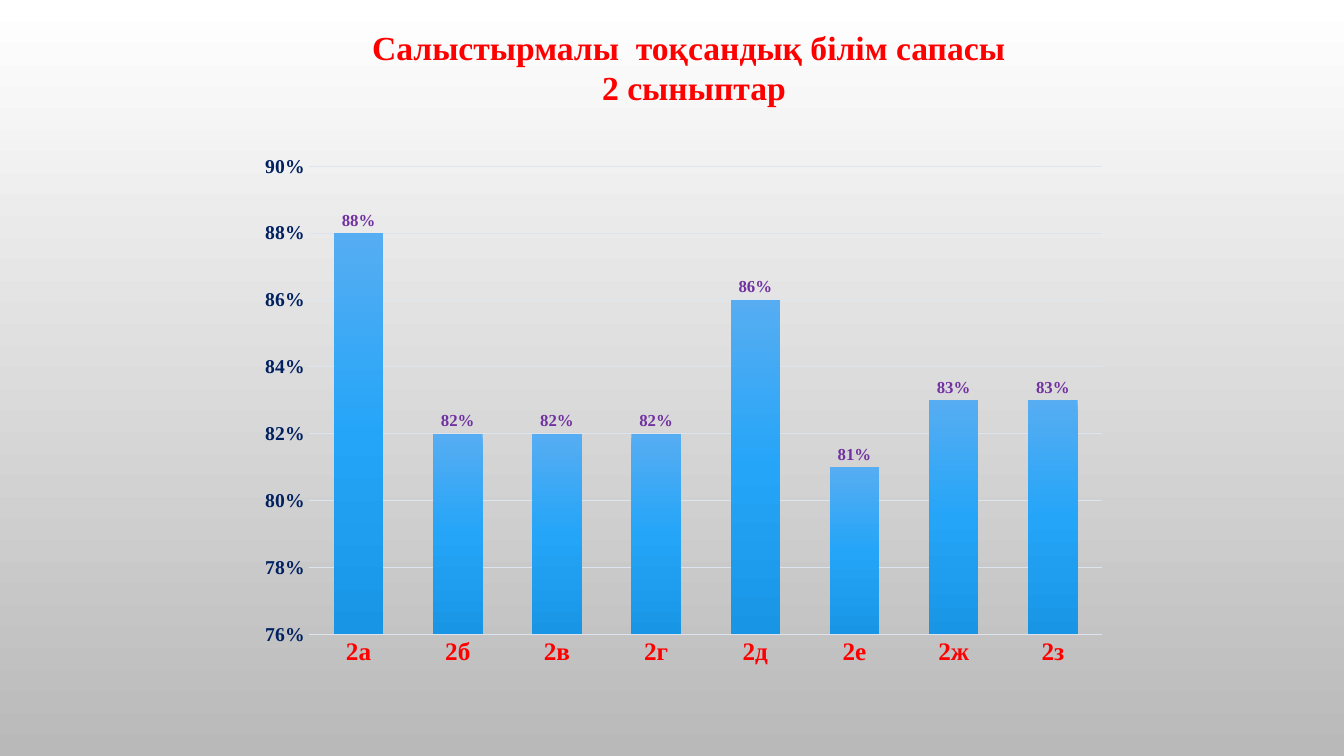
"""Build a slide comparing the quality of knowledge across the second-grade classes."""
from lxml.etree import SubElement
from pptx import Presentation
from pptx.chart.data import CategoryChartData
from pptx.dml.color import RGBColor
from pptx.enum.chart import XL_CHART_TYPE, XL_LABEL_POSITION, XL_TICK_MARK
from pptx.enum.text import MSO_ANCHOR, MSO_AUTO_SIZE, PP_ALIGN
from pptx.oxml import parse_xml
from pptx.oxml.ns import nsdecls, qn
from pptx.util import Emu, Pt

EMU_PER_INCH = 914400
PX_PER_INCH = 100.8

RED = RGBColor(0xFF, 0x00, 0x00)
NAVY = RGBColor(0x00, 0x20, 0x60)
PURPLE = RGBColor(0x70, 0x30, 0xA0)
BLACK = RGBColor(0x00, 0x00, 0x00)
GRID = RGBColor(0xDC, 0xE4, 0xEF)
BACKDROP = [RGBColor(0xFF, 0xFF, 0xFF), RGBColor(0xB9, 0xB9, 0xB9)]
BAR_SHADES = [RGBColor(0x56, 0xAD, 0xF2), RGBColor(0x25, 0xA5, 0xF8),
              RGBColor(0x18, 0x95, 0xE5)]

SERIF = "Times New Roman"
HEADING = [("Салыстырмалы  тоқсандық білім сапасы", PP_ALIGN.LEFT),
           ("2 сыныптар", PP_ALIGN.CENTER)]
QUALITY = {"2а": 0.88, "2б": 0.82, "2в": 0.82, "2г": 0.82,
           "2д": 0.86, "2е": 0.81, "2ж": 0.83, "2з": 0.83}
PLOT_AREA = {"x": 0.07, "y": 0.04, "w": 0.91, "h": 0.88}


def px(length):
    """Turn pixels into EMU."""
    return Emu(round(length * EMU_PER_INCH / PX_PER_INCH))


def style_font(font, size, colour, name=SERIF, bold=True):
    """Set the face, size, weight and colour of a font."""
    font.name, font.size, font.bold = name, Pt(size), bold
    font.color.rgb = colour


def paint_gradient(fill, owner, colours):
    """Fill from top to bottom with evenly spaced colours."""
    fill.gradient()
    fill.gradient_angle = 270
    stops = next(owner.iter(qn("a:gsLst")))
    for stop in list(stops):
        stops.remove(stop)
    for index, colour in enumerate(colours):
        position = 100000 * index // (len(colours) - 1)
        stop = SubElement(stops, qn("a:gs"), pos=str(position))
        SubElement(stop, qn("a:srgbClr"), val=str(colour))


def style_line(line):
    """Draw a thin pale line."""
    line.color.rgb = GRID
    line.width = Pt(0.75)


def style_axis(axis, size, colour):
    """Format axis labels and drop the tick marks."""
    axis.major_tick_mark = axis.minor_tick_mark = XL_TICK_MARK.NONE
    style_font(axis.tick_labels.font, size, colour)


def place_plot(chart):
    """Fix the inner plot area as fractions of the chart."""
    plot_area = chart._chartSpace.chart.plotArea
    for old in plot_area.findall(qn("c:layout")):
        plot_area.remove(old)
    layout = parse_xml(f"<c:layout {nsdecls('c')}/>")
    manual = SubElement(layout, qn("c:manualLayout"))
    SubElement(manual, qn("c:layoutTarget"), val="inner")
    for side in "xy":
        SubElement(manual, qn(f"c:{side}Mode"), val="edge")
    for side, share in PLOT_AREA.items():
        SubElement(manual, qn(f"c:{side}"), val=str(share))
    plot_area.insert(0, layout)


def add_heading(slide):
    """Write the two-line title."""
    title = slide.shapes.title
    title.left, title.top, title.width, title.height = map(px, (362, 22, 664, 92))
    frame = title.text_frame
    frame.word_wrap = True
    frame.auto_size = MSO_AUTO_SIZE.SHAPE_TO_FIT_TEXT
    frame.vertical_anchor = MSO_ANCHOR.TOP
    for index, (text, alignment) in enumerate(HEADING):
        line = frame.add_paragraph() if index else frame.paragraphs[0]
        line.alignment = alignment
        run = line.add_run()
        run.text = text
        style_font(run.font, 24, RED)


def add_quality_chart(slide):
    """Add the column chart of quality by class."""
    data = CategoryChartData(number_format="0%")
    data.categories = list(QUALITY)
    data.add_series("Series 1", list(QUALITY.values()))
    chart = slide.shapes.add_chart(XL_CHART_TYPE.COLUMN_CLUSTERED,
                                   *map(px, (248, 145, 872, 532)), data).chart
    chart.has_legend = chart.has_title = False
    style_font(chart.font, 10, BLACK, "Cabin", False)

    classes, percent = chart.category_axis, chart.value_axis
    style_axis(classes, 18, RED)
    style_line(classes.format.line)
    style_axis(percent, 14, NAVY)
    percent.format.line.fill.background()
    style_line(percent.major_gridlines.format.line)
    percent.minimum_scale, percent.maximum_scale = 0.76, 0.9
    percent.major_unit = 0.02
    percent.tick_labels.number_format = "0%"
    percent.tick_labels.number_format_is_linked = False

    columns = chart.plots[0]
    columns.gap_width, columns.overlap = 100, -24
    columns.vary_by_categories = False
    quality = columns.series[0]
    paint_gradient(quality.format.fill, quality._element, BAR_SHADES)
    labels = quality.data_labels
    labels.show_value = True
    labels.position = XL_LABEL_POSITION.OUTSIDE_END
    labels.number_format, labels.number_format_is_linked = "0%", False
    style_font(labels.font, 12, PURPLE)
    place_plot(chart)


def main():
    """Build and save the slide."""
    deck = Presentation()
    deck.slide_width, deck.slide_height = px(1344), px(756)
    slide = deck.slides.add_slide(deck.slide_layouts[5])
    paint_gradient(slide.background.fill, slide._element, BACKDROP)
    add_heading(slide)
    add_quality_chart(slide)
    deck.save("out.pptx")


if __name__ == "__main__":
    main()
